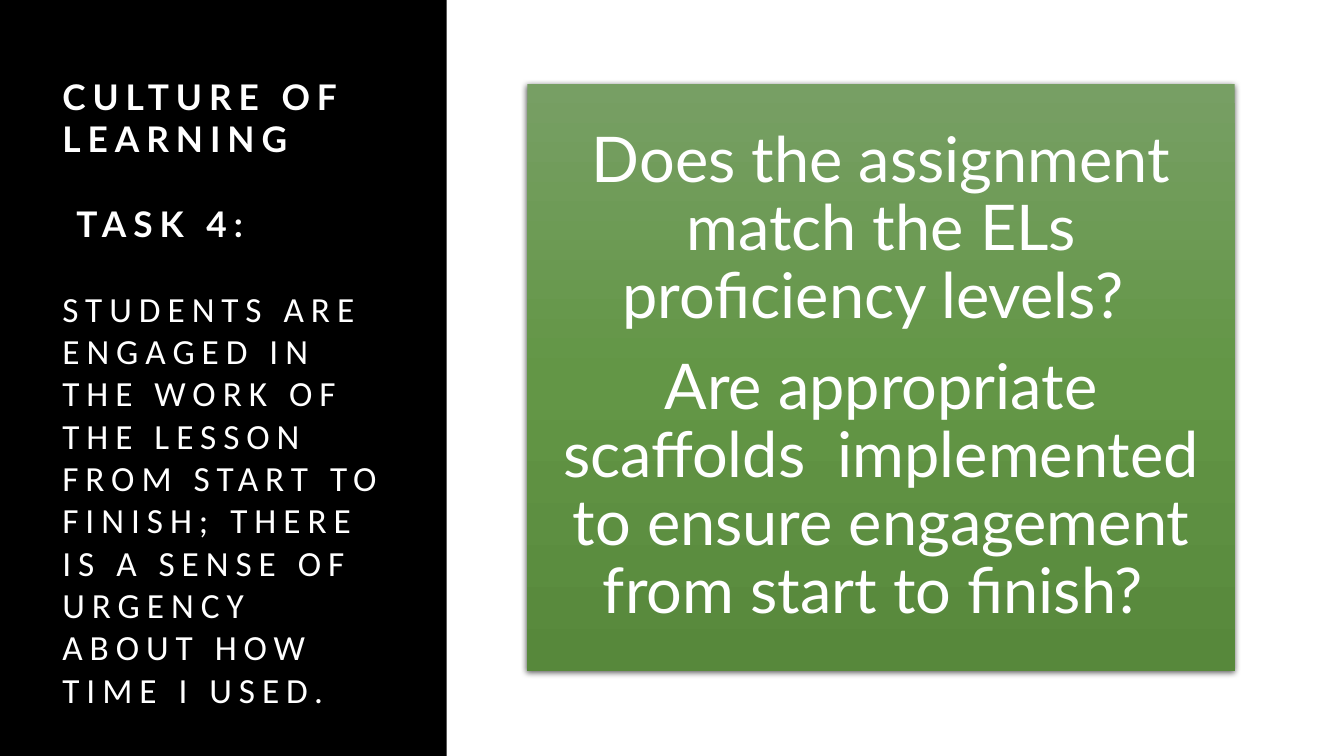
from copy import deepcopy

from lxml.etree import SubElement
from pptx import Presentation
from pptx.dml.color import RGBColor
from pptx.enum.shapes import MSO_SHAPE
from pptx.enum.text import MSO_ANCHOR, PP_ALIGN
from pptx.oxml.ns import qn
from pptx.util import Pt

BLACK = RGBColor(0x00, 0x00, 0x00)
WHITE = RGBColor(0xFF, 0xFF, 0xFF)
GREENS = [
    (0, RGBColor(0x77, 0x9F, 0x64)),
    (0.5, RGBColor(0x63, 0x96, 0x46)),
    (1, RGBColor(0x57, 0x88, 0x3B)),
]

deck = Presentation()
deck.slide_width, deck.slide_height = Pt(960), Pt(540)
slide = deck.slides.add_slide(deck.slide_layouts[6])


def add_rect(left, top, width, height):
    rect = slide.shapes.add_shape(
        MSO_SHAPE.RECTANGLE, Pt(left), Pt(top), Pt(width), Pt(height))
    rect.shadow.inherit = False
    rect.line.fill.background()
    return rect


def add_line(frame, index, text, look):
    para = frame.paragraphs[0] if index == 0 else frame.add_paragraph()
    run = para.add_run()
    run.text = text
    run.font.color.rgb = WHITE
    for name, value in look.items():
        setattr(run.font, name, value)
    return para


# Black side panel
panel = add_rect(0, 0, 319, 540)
panel.fill.solid()
panel.fill.fore_color.rgb = BLACK

# Title on the panel
title = slide.shapes.add_textbox(Pt(37.44), Pt(20.88), Pt(246.24), Pt(519.12))
frame = title.text_frame
frame.word_wrap = True
frame.vertical_anchor = MSO_ANCHOR.MIDDLE
head = {"name": "Lato", "size": Pt(25.2), "bold": True}
body = {"name": "Calibri", "size": Pt(25.2), "bold": False}
lines = [
    ("CULTURE OF LEARNING", head, 0),
    ("TASK 4:", head, 10),
    ("STUDENTS ARE ENGAGED IN THE WORK OF THE LESSON FROM START TO "
     "FINISH; THERE IS A SENSE OF URGENCY ABOUT HOW TIME I USED.", body, 0),
]
for index, (text, look, indent) in enumerate(lines):
    para = add_line(frame, index, text, look)
    para.space_before = Pt(30.24 if index else 0)
    para._p.get_or_add_pPr().set("marL", str(Pt(indent)))
    para.runs[0].font._element.set("spc", "500")

# Green card with gradient
card = add_rect(376.6, 59.8, 505.4, 419.8)
card.fill.gradient()
card.fill.gradient_angle = 270
stops = card._element.spPr.find(".//" + qn("a:gsLst"))
stops.append(deepcopy(stops[0]))
for stop, (place, color) in zip(card.fill.gradient_stops, GREENS):
    stop.position = place
    stop.color.rgb = color

# Card shadow
effect = card._element.spPr.find(qn("a:effectLst"))
shade = SubElement(effect, qn("a:outerShdw"), blurRad=str(Pt(4.5)),
                   dist=str(Pt(1.5)), dir="5400000", algn="ctr", rotWithShape="0")
tone = SubElement(shade, qn("a:srgbClr"), val=str(BLACK))
SubElement(tone, qn("a:alpha"), val="63000")

# Questions on the card
frame = card.text_frame
setup = {"word_wrap": True, "vertical_anchor": MSO_ANCHOR.MIDDLE}
for side in ("left", "top", "right", "bottom"):
    setup["margin_" + side] = Pt(25.2)
for name, value in setup.items():
    setattr(frame, name, value)
asks = [
    "Does the assignment match the ELs proficiency levels? ",
    "Are appropriate scaffolds  implemented to ensure engagement "
    "from start to finish? ",
]
for index, text in enumerate(asks):
    para = add_line(frame, index, text, {"name": "Lato", "size": Pt(45)})
    para.alignment = PP_ALIGN.CENTER
    para.line_spacing = 0.9
    para.space_before = Pt(15.75 if index else 0)

deck.save("out.pptx")
